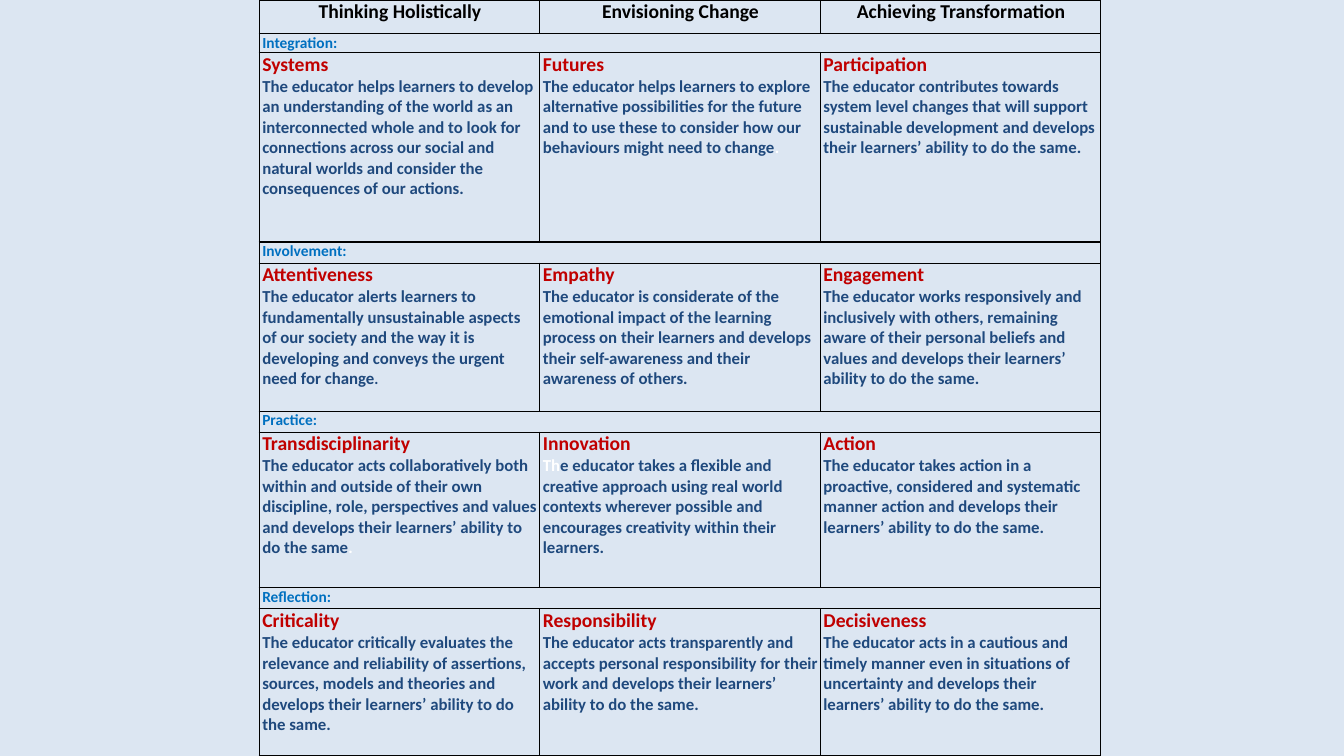
from lxml import etree
from pptx import Presentation
from pptx.dml.color import RGBColor
from pptx.enum.text import PP_ALIGN
from pptx.oxml.ns import qn
from pptx.util import Cm, Pt

CENTER = PP_ALIGN.CENTER
LEFT = PP_ALIGN.LEFT
BLACK, WHITE, RED, NAVY, BLUE = "000000", "FFFFFF", "C00000", "1F497D", "0070C0"

COLUMN_WIDTH = 7.07
ROW_HEIGHTS = [0.84, 0.48, 4.78, 0.53, 3.73, 0.53, 3.92, 0.53, 3.71]
HEADINGS = ["Thinking Holistically", "Envisioning Change", "Achieving Transformation"]
SECTIONS = [
    ("Integration:", [
        ("Systems", [("The educator helps learners to develop an understanding of the world as an "
                      "interconnected whole and to look for connections across our social and natural "
                      "worlds and consider the consequences of our actions.", {})]),
        ("Futures", [("The educator helps learners to explore alternative possibilities for the future "
                      "and to use these to consider how our behaviours might need to change", {}),
                     (".", {"color": WHITE})]),
        ("Participation", [("The educator contributes towards system level changes that will support "
                            "sustainable development and develops their learners’ ability to do the "
                            "same.", {})]),
    ]),
    ("Involvement:", [
        ("Attentiveness", [("The educator alerts learners to fundamentally unsustainable aspects of our "
                            "society and the way it is developing and conveys the urgent need for "
                            "change", {}),
                           (".", {"size": 11})]),
        ("Empathy", [("The educator is considerate of the emotional impact of the learning process on "
                      "their learners and develops their self-awareness and their awareness of "
                      "others.", {})]),
        ("Engagement", [("The educator works responsively and inclusively with others, remaining aware "
                         "of their personal beliefs and values and develops their learners’ ability to "
                         "do the same.", {})]),
    ]),
    ("Practice:", [
        ("Transdisciplinarity", [("The educator acts collaboratively both within and outside of their "
                                  "own discipline, role, perspectives and values and develops their "
                                  "learners’ ability to do the same", {}),
                                 (".", {"color": WHITE})]),
        ("Innovation", [("Th", {"color": WHITE}),
                        ("e educator takes a flexible and creative approach using real world contexts "
                         "wherever possible and encourages creativity within their learners.", {})]),
        ("Action", [("The educator takes action in a proactive, considered and systematic manner action "
                     "and develops their learners’ ability to do the same.", {})]),
    ]),
    ("Reflection:", [
        ("Criticality", [("The educator critically evaluates the relevance and reliability of "
                          "assertions, sources, models and theories and develops their learners’ "
                          "ability to do the same.", {})]),
        ("Responsibility", [("The educator acts transparently and accepts personal responsibility for "
                             "their work and develops their learners’ ability to do the same.", {})]),
        ("Decisiveness", [("The educator acts in a cautious and timely manner even in situations of "
                           "uncertainty and develops their learners’ ability to do the same.", {})]),
    ]),
]


def rgb(color):
    return RGBColor.from_string(color)


def add_text(p, text, size=12, color=NAVY, align=LEFT):
    p.alignment = align
    r = p.add_run()
    r.text = text
    r.font.name = "Calibri"
    r.font.size = Pt(size)
    r.font.bold = True
    r.font.color.rgb = rgb(color)


def format_cell(cell):
    cell.margin_left, cell.margin_right = Cm(0.08), Cm(0.05)
    cell.margin_top = cell.margin_bottom = Cm(0)
    tc_pr = cell._tc.get_or_add_tcPr()
    for side in ("a:lnL", "a:lnR", "a:lnT", "a:lnB"):
        line = etree.SubElement(tc_pr, qn(side), w=str(Pt(1)))
        fill = etree.SubElement(line, qn("a:solidFill"))
        etree.SubElement(fill, qn("a:srgbClr"), val=BLACK)
    cell.fill.background()


def add_grid(s):
    columns = len(HEADINGS)
    table = s.shapes.add_table(len(ROW_HEIGHTS), columns, Cm(6.53), Cm(0),
                               Cm(COLUMN_WIDTH * columns), Cm(sum(ROW_HEIGHTS))).table
    table.first_row = table.horz_banding = False
    for column in table.columns:
        column.width = Cm(COLUMN_WIDTH)
    for row, height in zip(table.rows, ROW_HEIGHTS):
        row.height = Cm(height)
    for cell in table.iter_cells():
        format_cell(cell)
    return table


def fill_section(table, row, label, competences):
    band = table.cell(row, 0)
    band.merge(table.cell(row, len(HEADINGS) - 1))
    add_text(band.text_frame.paragraphs[0], label, size=11, color=BLUE)
    for column, (name, parts) in enumerate(competences):
        tf = table.cell(row + 1, column).text_frame
        add_text(tf.paragraphs[0], name, size=14, color=RED)
        p = tf.add_paragraph()
        for text, style in parts:
            add_text(p, text, **style)


def main():
    prs = Presentation()
    prs.slide_width, prs.slide_height = Cm(33.87), Cm(19.05)
    s = prs.slides.add_slide(prs.slide_layouts[6])
    s.background.fill.solid()
    s.background.fill.fore_color.rgb = rgb("DCE6F2")
    table = add_grid(s)
    for column, heading in enumerate(HEADINGS):
        p = table.cell(0, column).text_frame.paragraphs[0]
        add_text(p, heading, size=14, color=BLACK, align=CENTER)
    for index, (label, competences) in enumerate(SECTIONS):
        fill_section(table, 1 + 2 * index, label, competences)
    prs.save("out.pptx")


if __name__ == "__main__":
    main()
